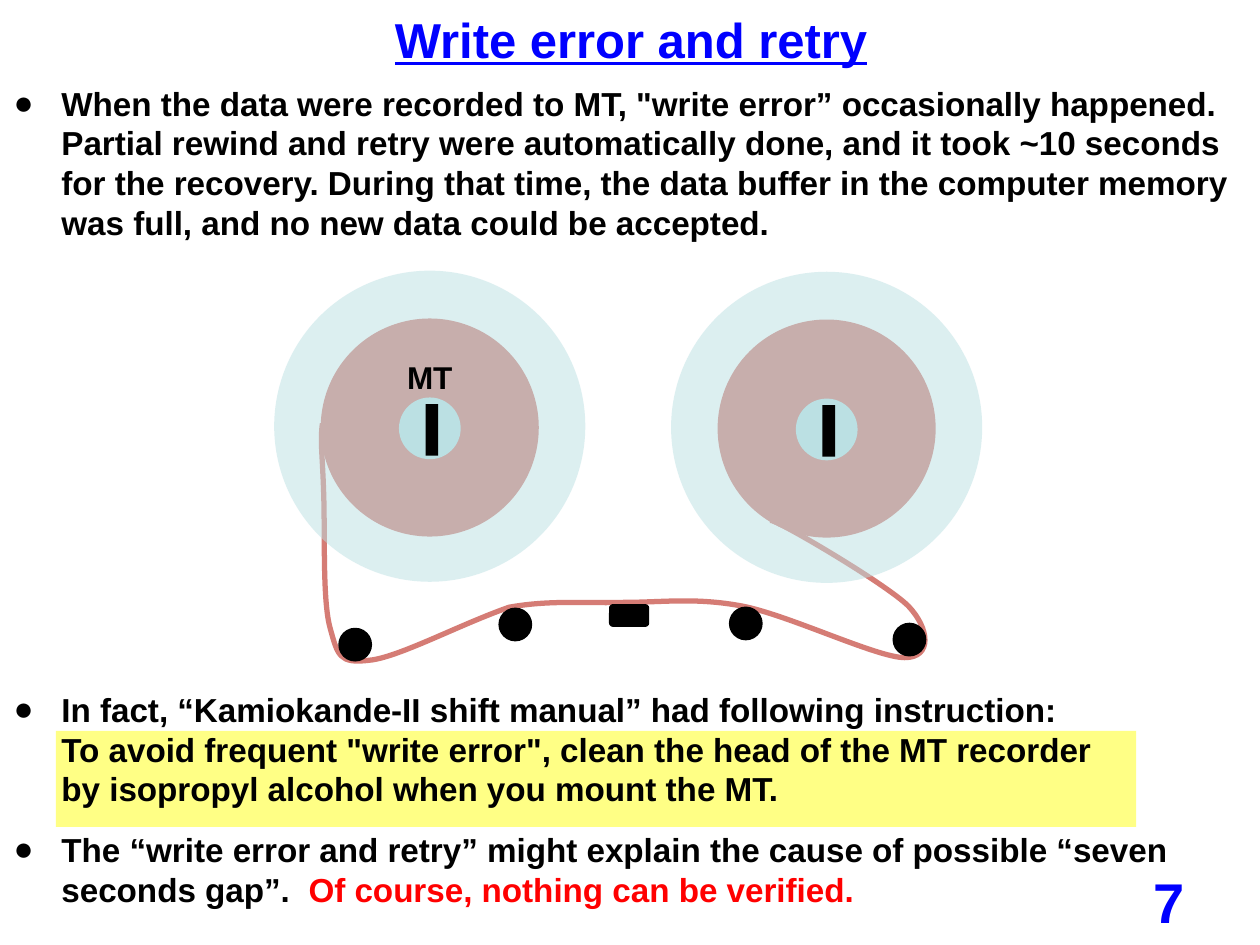
import dataclasses

import lxml.etree
import pptx
import pptx.dml.color
import pptx.enum.shapes
import pptx.enum.text
import pptx.oxml.ns
import pptx.util

Pt = pptx.util.Pt
Shape = pptx.enum.shapes.MSO_SHAPE
Align = pptx.enum.text.PP_ALIGN
Anchor = pptx.enum.text.MSO_ANCHOR
AutoSize = pptx.enum.text.MSO_AUTO_SIZE
qn = pptx.oxml.ns.qn


@dataclasses.dataclass(frozen=True)
class Theme:
    font: str = "Arial"
    title_size: float = 28
    body_size: float = 19
    label_size: float = 18
    number_size: float = 32
    line_factor: float = 1.195
    black: str = "000000"
    blue: str = "0000FF"
    red: str = "FF0000"
    highlight: str = "FFFF85"
    tape: str = "D57C75"
    reel: str = "BBE0E3"


def set_attributes(target, values):
    for name, value in values.items():
        setattr(target, name, value)


class SlideBuilder:
    def __init__(self, presentation, theme):
        self.theme = theme
        self.slide = presentation.slides.add_slide(presentation.slide_layouts[6])
        self.shapes = self.slide.shapes

    def color(self, value):
        return pptx.dml.color.RGBColor.from_string(value)

    def outline(self, shape, color, width):
        shape.line.color.rgb = self.color(color)
        shape.line.width = Pt(width)

    def block(self, kind, box, fill, line_width=0, opacity=100):
        shape = self.shapes.add_shape(kind, *map(Pt, box))
        shape.shadow.inherit = False
        shape.fill.solid()
        shape.fill.fore_color.rgb = self.color(fill)
        if opacity < 100:
            color = shape.fill._xPr.find(".//" + qn("a:srgbClr"))
            lxml.etree.SubElement(color, qn("a:alpha"), val=str(opacity * 1000))
        if line_width:
            self.outline(shape, fill, line_width)
        else:
            shape.line.fill.background()
        return shape

    def circle(self, center_x, center_y, diameter, fill, **options):
        box = (center_x - diameter / 2, center_y - diameter / 2, diameter, diameter)
        return self.block(Shape.OVAL, box, fill, **options)

    def text(self, box, paragraphs, size, frame=None, bullet_indent=0, **paragraph_format):
        shape = self.shapes.add_textbox(*map(Pt, box))
        text_frame = shape.text_frame
        set_attributes(text_frame, {"word_wrap": True, **(frame or {})})
        for index, (space_before, runs) in enumerate(paragraphs):
            paragraph = text_frame.add_paragraph() if index else text_frame.paragraphs[0]
            set_attributes(paragraph, {
                "line_spacing": Pt(size * self.theme.line_factor),
                "space_before": Pt(space_before),
                **paragraph_format,
            })
            if bullet_indent:
                self.bullet(paragraph, bullet_indent)
            for content, color, underline in runs:
                self.run(paragraph, content, size, color, underline)
        return shape

    def run(self, paragraph, content, size, color, underline):
        for index, line in enumerate(content.split("\n")):
            if index:
                paragraph.add_line_break()
            run = paragraph.add_run()
            run.text = line
            set_attributes(run.font, {
                "name": self.theme.font,
                "size": Pt(size),
                "bold": True,
                "underline": underline,
            })
            run.font.color.rgb = self.color(color)

    def bullet(self, paragraph, indent):
        properties = paragraph._p.get_or_add_pPr()
        properties.set("marL", str(Pt(indent)))
        properties.set("indent", str(-Pt(indent)))
        lxml.etree.SubElement(properties, qn("a:buFont"), typeface=self.theme.font)
        lxml.etree.SubElement(properties, qn("a:buChar"), char="●")

    def curve(self, start, segments, color, width):
        points = [tuple(map(Pt, point)) for segment in segments for point in segment]
        builder = self.shapes.build_freeform(*map(Pt, start))
        builder.add_line_segments(points, close=False)
        shape = builder.convert_to_shape()
        lines = list(shape._element.iter(qn("a:lnTo")))
        for first, second, end in zip(lines[::3], lines[1::3], lines[2::3]):
            first.tag = qn("a:cubicBezTo")
            for line in (second, end):
                first.append(line[0])
                line.getparent().remove(line)
        shape.shadow.inherit = False
        shape.fill.background()
        self.outline(shape, color, width)
        return shape

    def reel(self, center_x, center_y, label=None):
        theme = self.theme
        slide_shapes = self.shapes
        self.shapes = slide_shapes.add_group_shape().shapes
        self.circle(center_x, center_y, 124.6, theme.tape)
        self.circle(center_x, center_y + 0.5, 35.3, theme.reel)
        self.circle(center_x, center_y - 0.7, 177.8, theme.reel, opacity=50)
        self.block(Shape.RECTANGLE, (center_x - 2.4, center_y - 13.4, 7.2, 29.5), theme.black)
        if label:
            self.text((center_x - 51.1, center_y - 43.2, 102.2, 28.8),
                      [(0, [(label, theme.black, False)])], theme.label_size,
                      {"auto_size": AutoSize.SHAPE_TO_FIT_TEXT}, alignment=Align.CENTER)
        self.shapes = slide_shapes


def main():
    presentation = pptx.Presentation()
    set_attributes(presentation, {"slide_width": Pt(720), "slide_height": Pt(540)})
    theme = Theme()
    builder = SlideBuilder(presentation, theme)

    builder.block(Shape.RECTANGLE, (31.9, 417.6, 617.4, 54.9), theme.highlight)
    builder.text((217.7, 2, 285.8, 41), [(0, [("Write error and retry", theme.blue, True)])],
                 theme.title_size, {"word_wrap": False, "auto_size": AutoSize.SHAPE_TO_FIT_TEXT},
                 alignment=Align.CENTER)
    body = [
        (0, [('When the data were recorded to MT, "write error” occasionally happened. '
              "Partial rewind and retry were automatically done, and it took ~10 seconds "
              "for the recovery. During that time, the data buffer in the computer memory "
              "was full, and no new data could be accepted.", theme.black, False)]),
        (243.6, [("In fact, “Kamiokande-II shift manual” had following instruction:\n"
                  'To avoid frequent "write error", clean the head of the MT recorder\n'
                  "by isopropyl alcohol when you mount the MT.", theme.black, False)]),
        (0, [("The “write error and retry” might explain the cause of possible “seven "
              "seconds gap”.  ", theme.black, False),
             ("Of course, nothing can be verified.", theme.red, False)]),
    ]
    builder.text((0.7, 44, 719.3, 484.6), body, theme.body_size,
                 {"auto_size": AutoSize.SHAPE_TO_FIT_TEXT}, bullet_indent=27.3,
                 space_after=Pt(12))

    tape_segments = [
        ((182.9, 252), (184.3, 259.2), (185, 282.2)),
        ((185.8, 306), (184.3, 342.7), (188.6, 358.6)),
        ((193, 374.4), (193.7, 379.4), (211, 377.3)),
        ((227.5, 375.8), (262.1, 357.1), (290.9, 347)),
        ((314.6, 342.7), (334.8, 344.9), (356.4, 344.2)),
        ((378.7, 344.2), (397.4, 341.3), (424.1, 346.3)),
        ((450.7, 351.4), (501.1, 375.8), (517, 375.8)),
        ((532.8, 375.8), (531.4, 359.3), (519.1, 346.3)),
        ((506.2, 333.4), (439.9, 294.5), (439.9, 297.4)),
    ]
    builder.curve((184.3, 241.9), tape_segments, theme.tape, 3)
    builder.reel(245.6, 244.3, "MT")
    builder.block(Shape.ROUNDED_RECTANGLE, (348, 345.2, 23, 13), theme.black)
    builder.reel(472.4, 244.9)
    for center_x, center_y in [(519.7, 365.5), (203, 368.4), (294.5, 356.9), (426.2, 356.3)]:
        builder.circle(center_x, center_y, 17.3, theme.black, line_width=2)
    builder.text((516.2, 500.4, 167.8, 28.8), [(0, [("7", theme.blue, False)])],
                 theme.number_size, {"vertical_anchor": Anchor.MIDDLE}, alignment=Align.RIGHT)
    presentation.save("out.pptx")


if __name__ == "__main__":
    main()
